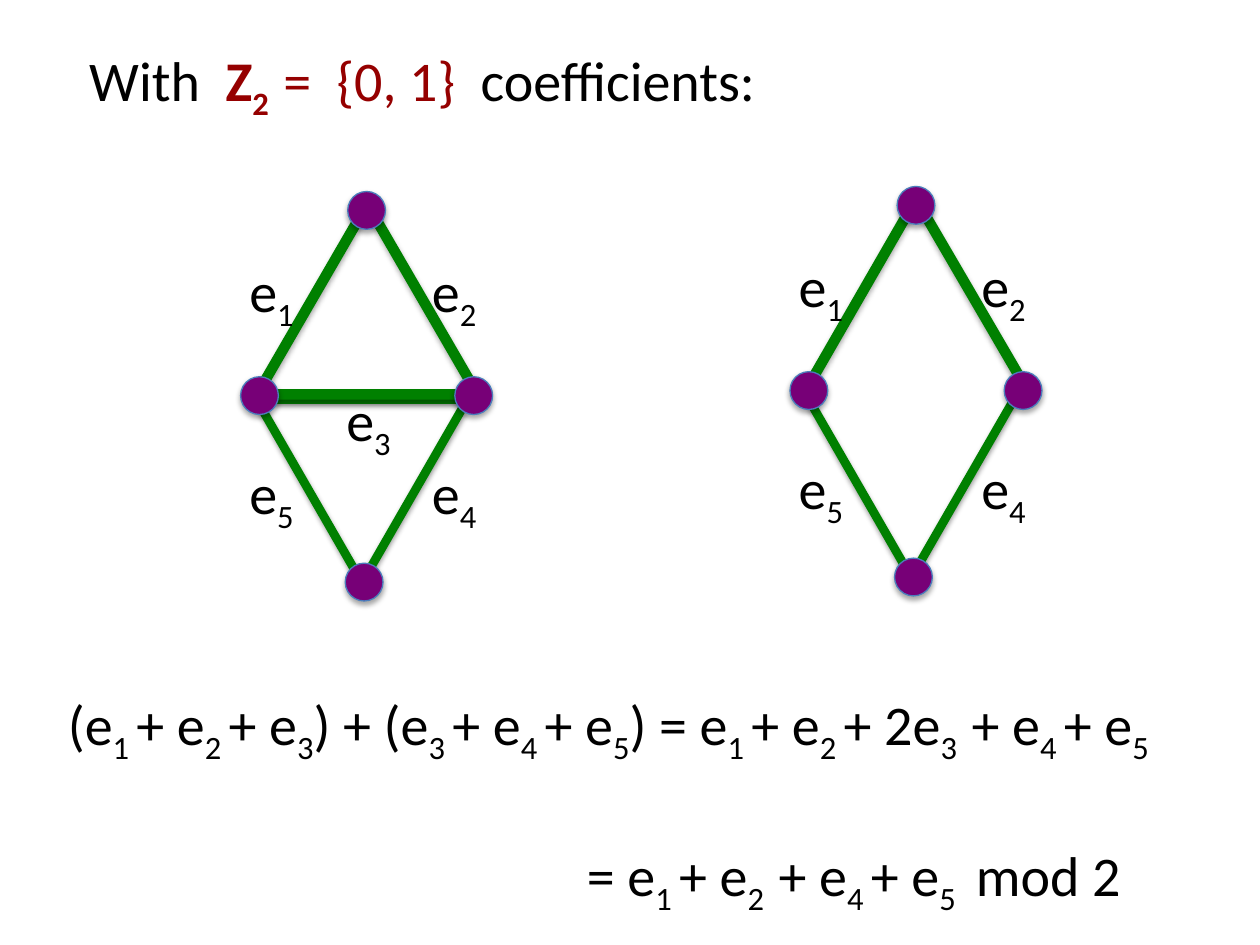
from lxml import etree
from pptx import Presentation
from pptx.dml.color import RGBColor
from pptx.enum.shapes import MSO_CONNECTOR, MSO_SHAPE
from pptx.oxml.ns import qn
from pptx.util import Inches, Pt

GREEN, PURPLE, BLUE, RED = "008000", "770077", "4B7EBC", "950000"


def style(shape, line, width, fill=None, distance=1.8, alpha=35):
    """Set outline and optional fill, and drop a soft shadow straight down."""
    shape.line.color.rgb = RGBColor.from_string(line)
    shape.line.width = Pt(width)
    if fill:
        shape.fill.solid()
        shape.fill.fore_color.rgb = RGBColor.from_string(fill)
    elif hasattr(shape, "fill"):
        shape.fill.background()
    effects = etree.SubElement(shape._element.spPr, qn("a:effectLst"))
    shadow = etree.SubElement(effects, qn("a:outerShdw"), blurRad=str(Pt(3.1)),
                              dist=str(Pt(distance)), dir="5400000", rotWithShape="0")
    black = etree.SubElement(shadow, qn("a:srgbClr"), val="000000")
    etree.SubElement(black, qn("a:alpha"), val=str(alpha * 1000))


def add_text(shapes, text, left, top, width, height=0.64, size=32, color="000000"):
    """Add a text box; every second piece between bars is a subscript."""
    box = shapes.add_textbox(Inches(left), Inches(top), Inches(width), Inches(height))
    frame = box.text_frame
    frame.word_wrap = True
    for row, content in enumerate(text.split("\n")):
        paragraph = frame.add_paragraph() if row else frame.paragraphs[0]
        for index, piece in enumerate(content.split("|")):
            if not piece:
                continue
            run = paragraph.add_run()
            run.text = piece
            run.font.name = "Calibri"
            run.font.size = Pt(size)
            run.font.color.rgb = RGBColor.from_string(color)
            if index % 2:
                run.font._element.set("baseline", "-25000")
    return frame.paragraphs


presentation = Presentation()
presentation.slide_width = Inches(10)
presentation.slide_height = Inches(7.5)
slide = presentation.slides.add_slide(presentation.slide_layouts[6])

heading = add_text(slide.shapes, "With  ||Z|2  |=  {0, 1}  ||coefficients:", 0.61, 0.31, 6.19)
for run in heading[0].runs[1:4]:
    run.font.color.rgb = RGBColor.from_string(RED)
for run in heading[0].runs[1:3]:
    run.font.bold = True

# Edges, nodes and labels are placed relative to the left node of each graph.
lower_edges = [((0.77, 1.41), (0.01, 0.09)), ((1.61, 0.1), (0.85, 1.42))]
middle_edge = ((1.64, 0.03), (0.12, 0.03))
nodes = [(0, 0), (1.7, 0), (0.85, -1.47), (0.83, 1.48)]
outer_labels = [("e|1", -0.18, -1.15), ("e|2", 1.27, -1.15),
                ("e|4", 1.27, 0.45), ("e|5", -0.18, 0.45)]
middle_label = ("e|3", 0.59, -0.13)
apex_x, base_left, base_right, apex_y, base_y = 0.85, -0.02, 1.73, -1.52, -0.01
radius = 0.15

for x, y, has_middle in [(6.42, 3.1, False), (2.06, 3.14, True)]:
    graph = slide.shapes.add_group_shape().shapes
    edges = lower_edges + ([middle_edge] if has_middle else [])
    for (x1, y1), (x2, y2) in edges:
        edge = graph.add_connector(MSO_CONNECTOR.STRAIGHT, Inches(x + x1), Inches(y + y1),
                                   Inches(x + x2), Inches(y + y2))
        style(edge, GREEN, 5, distance=1.6, alpha=38)

    if has_middle:
        upper_edges = graph.add_shape(MSO_SHAPE.ISOSCELES_TRIANGLE,
                                      Inches(x + base_left), Inches(y + apex_y),
                                      Inches(base_right - base_left), Inches(base_y - apex_y))
    else:
        roof = graph.build_freeform(Inches(x + base_left), Inches(y + base_y))
        roof.add_line_segments([(Inches(x + apex_x), Inches(y + apex_y)),
                                (Inches(x + base_right), Inches(y + base_y))], close=False)
        upper_edges = roof.convert_to_shape()
    style(upper_edges, GREEN, 6)

    for node_x, node_y in nodes:
        node = graph.add_shape(MSO_SHAPE.OVAL, Inches(x + node_x - radius),
                               Inches(y + node_y - radius),
                               Inches(2 * radius), Inches(2 * radius))
        style(node, BLUE, 0.75, fill=PURPLE)

    labels = outer_labels + ([middle_label] if has_middle else [])
    for label, label_x, label_y in labels:
        add_text(graph, label, x + label_x, y + label_y, 0.71)

total, reduced = add_text(
    slide.shapes,
    "(e|1 |+ e|2 |+ e|3|) + (e|3 |+ e|4 |+ e|5|) = e|1 |+ e|2 |+ 2e|3  |+ e|4 |+ e|5\n"
    "= e|1 |+ e|2  |+ e|4 |+ e|5 | mod 2",
    0.44, 5.42, 9.56, height=1.54)
reduced.space_before = Pt(43)
reduced._p.get_or_add_pPr().set("marL", str(Inches(4.12)))

presentation.save("out.pptx")
